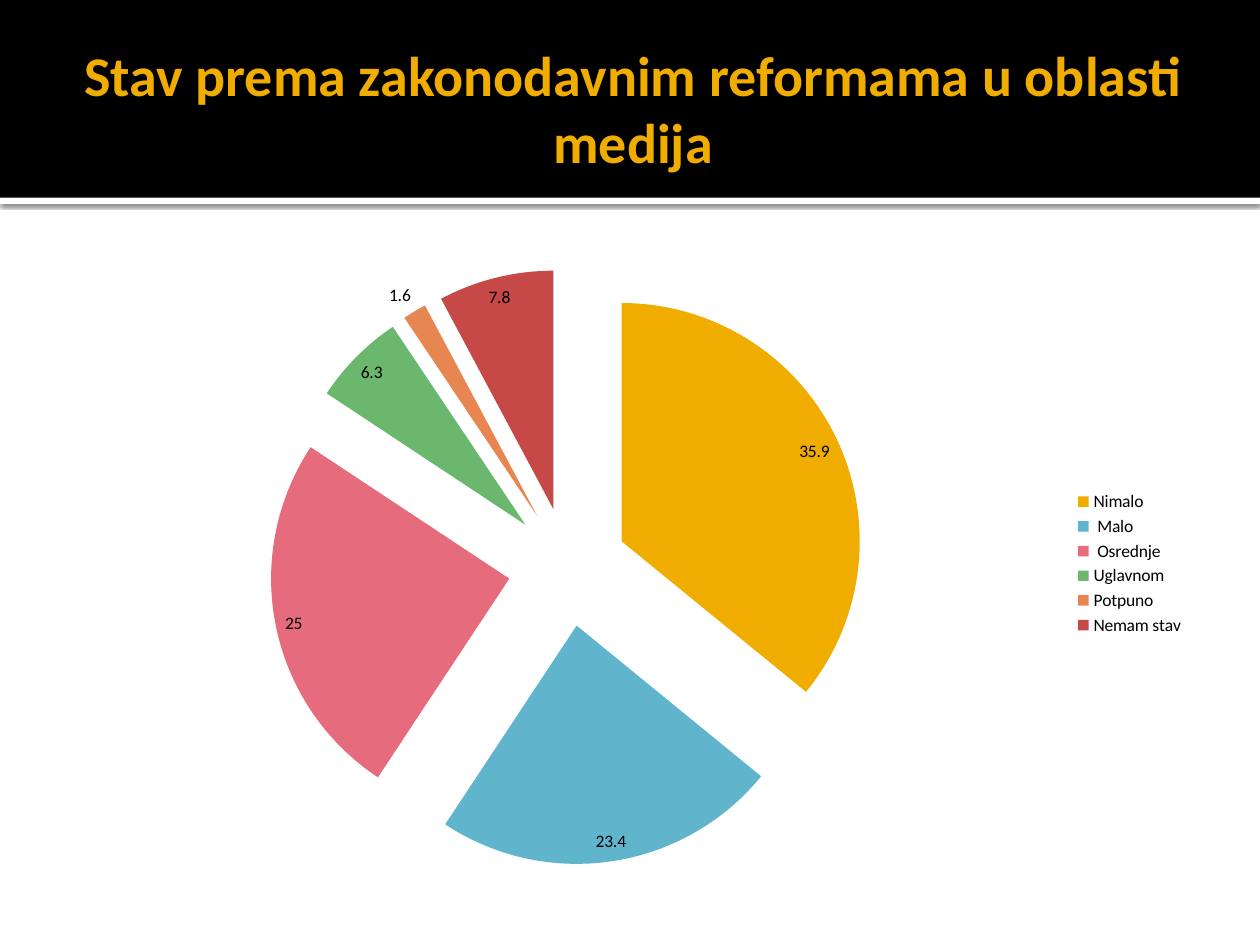
from lxml import etree
from pptx import Presentation
from pptx.chart.data import CategoryChartData
from pptx.dml.color import RGBColor
from pptx.enum.chart import XL_CHART_TYPE, XL_LABEL_POSITION, XL_LEGEND_POSITION
from pptx.enum.shapes import MSO_SHAPE
from pptx.enum.text import MSO_ANCHOR, PP_ALIGN
from pptx.oxml import parse_xml
from pptx.oxml.ns import qn
from pptx.util import Pt

PIE = XL_CHART_TYPE.PIE
BEST_FIT = XL_LABEL_POSITION.BEST_FIT
LEGEND_RIGHT = XL_LEGEND_POSITION.RIGHT
RECTANGLE = MSO_SHAPE.RECTANGLE
MIDDLE = MSO_ANCHOR.MIDDLE
CENTER = PP_ALIGN.CENTER

FONT = "Calibri"
BLACK, WHITE, GOLD = "000000", "FFFFFF", "F0AD00"
TITLE = "Stav prema zakonodavnim reformama u oblasti medija"
ATTITUDES = [
    ("Nimalo", 35.9, GOLD),
    (" Malo", 23.4, "60B5CC"),
    (" Osrednje", 25, "E66C7D"),
    ("Uglavnom", 6.3, "6BB76D"),
    ("Potpuno", 1.6, "E88651"),
    ("Nemam stav", 7.8, "C64847"),
]
EXPLOSION = 25
SHADOW = (
    '<a:effectLst xmlns:a="http://schemas.openxmlformats.org/drawingml/2006/main">'
    '<a:outerShdw blurRad="31750" dist="10160" dir="5400000" algn="tl" rotWithShape="0">'
    '<a:srgbClr val="000000"><a:alpha val="60000"/></a:srgbClr>'
    "</a:outerShdw></a:effectLst>"
)


def rgb(value):
    """Turn a hex string into a colour."""
    return RGBColor.from_string(value)


def apply_format(target, values):
    """Set every attribute in a dict of format values."""
    for name, value in values.items():
        setattr(target, name, value)


def place(shape, left, top, width, height):
    """Move a shape to a box given in points."""
    apply_format(shape, {"left": Pt(left), "top": Pt(top),
                         "width": Pt(width), "height": Pt(height)})


def add_bar(slide, left, top, width, height, color):
    """Draw a borderless filled rectangle."""
    bar = slide.shapes.add_shape(RECTANGLE, Pt(left), Pt(top), Pt(width), Pt(height))
    bar.shadow.inherit = False
    bar.fill.solid()
    bar.fill.fore_color.rgb = rgb(color)
    bar.line.fill.background()
    return bar


def add_header(slide, left, top, width, height):
    """Draw the black band, its shadowed white rule and the title."""
    rule = add_bar(slide, left, top + height, width, 3.6, WHITE)
    properties = rule.fill._xPr
    properties.remove(properties.find(qn("a:effectLst")))
    properties.append(parse_xml(SHADOW))
    add_bar(slide, left, top, width, height, BLACK)

    title = slide.shapes.title
    place(title, left + 36, top + 12.2, width - 72, height - 14.4)
    slide.shapes._spTree.append(title.element)
    frame = title.text_frame
    frame.text = TITLE
    apply_format(frame, {"word_wrap": True, "vertical_anchor": MIDDLE,
                         "margin_left": Pt(7.2), "margin_right": Pt(3.6),
                         "margin_top": Pt(3.6), "margin_bottom": Pt(3.6)})
    paragraph = frame.paragraphs[0]
    paragraph.alignment = CENTER
    font = paragraph.runs[0].font
    apply_format(font, {"name": FONT, "size": Pt(32), "bold": True})
    font.color.rgb = rgb(GOLD)


def add_attitude_chart(slide, left, top, width, height):
    """Draw the exploded pie of attitudes with its legend."""
    names, shares, colors = zip(*ATTITUDES)
    data = CategoryChartData()
    data.categories = names
    data.add_series("Series 1", shares)
    chart = slide.shapes.add_chart(
        PIE, Pt(left), Pt(top), Pt(width), Pt(height), data).chart
    apply_format(chart, {"has_title": False, "has_legend": True})
    apply_format(chart.legend, {"position": LEGEND_RIGHT, "include_in_layout": False})
    apply_format(chart.font, {"name": FONT, "size": Pt(10)})
    chart.font.color.rgb = rgb(BLACK)

    plot = chart.plots[0]
    apply_format(plot, {"vary_by_categories": True, "has_data_labels": True})
    apply_format(plot.data_labels, {"show_value": True, "show_percentage": False,
                                    "position": BEST_FIT, "number_format": "General",
                                    "number_format_is_linked": False})
    series = plot.series[0]
    for index, color in enumerate(colors):
        fill = series.points[index].format.fill
        fill.solid()
        fill.fore_color.rgb = rgb(color)
    explosion = etree.Element(qn("c:explosion"), val=str(EXPLOSION))
    series._element.find(qn("c:dPt")).addprevious(explosion)


def main():
    """Build the slide and save it."""
    presentation = Presentation()
    apply_format(presentation, {"slide_width": Pt(720), "slide_height": Pt(540)})
    slide = presentation.slides.add_slide(presentation.slide_layouts[5])
    slide.background.fill.solid()
    slide.background.fill.fore_color.rgb = rgb(WHITE)
    add_header(slide, 0, 0, 720, 113)
    add_attitude_chart(slide, 36, 140, 648, 364)
    presentation.save("out.pptx")


if __name__ == "__main__":
    main()
